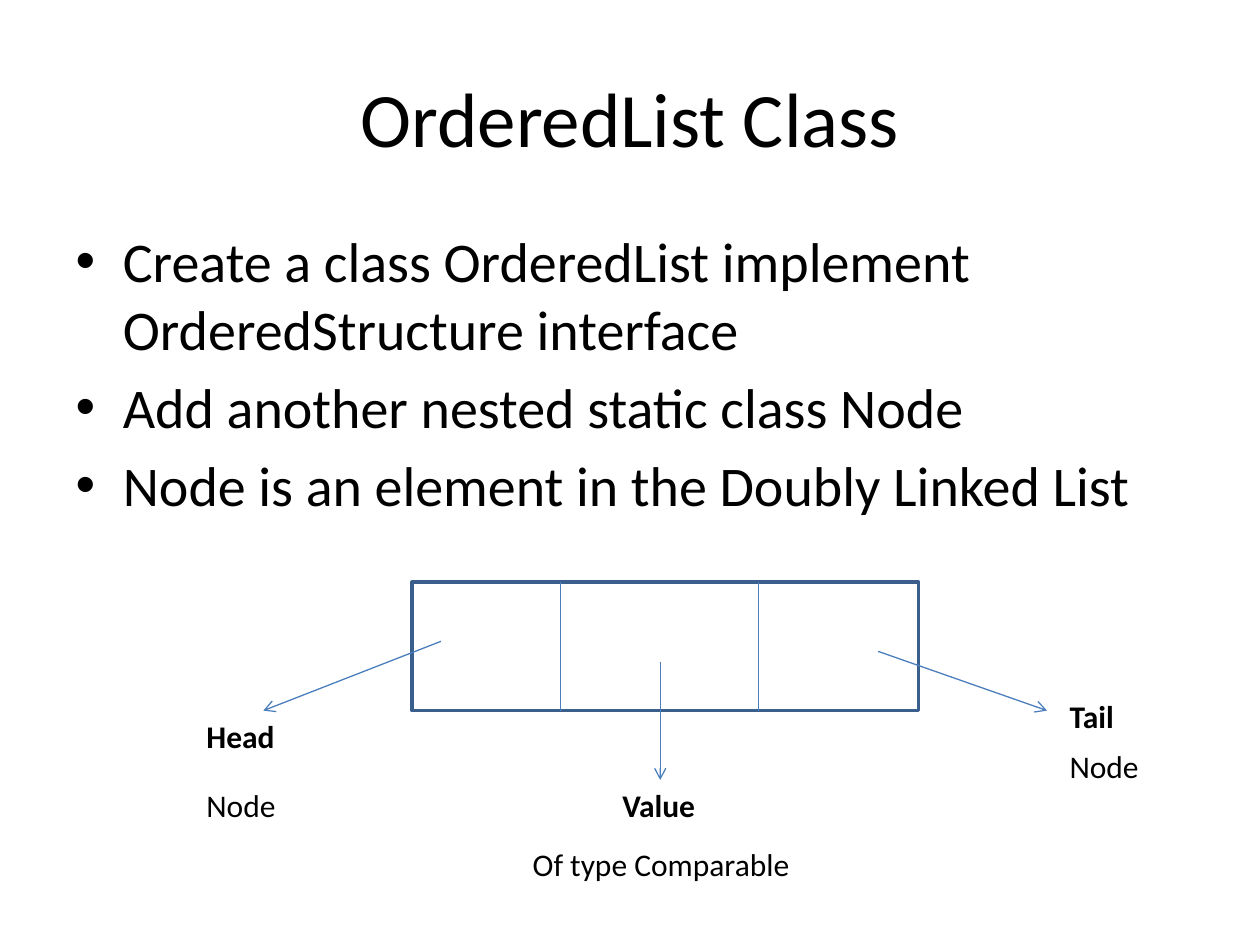
from dataclasses import dataclass

import pptx
import pptx.dml.color
import pptx.enum.shapes
import pptx.enum.text
import pptx.oxml.ns
import pptx.util
from lxml import etree
from pptx.util import Inches

COLORS = {"text": "000000", "outline": "3A5F8C", "line": "4B7EBC"}
FONT = "Calibri"
NODE_LEFT, NODE_TOP, NODE_WIDTH, NODE_HEIGHT = 3.27, 4.62, 4.02, 1.02
NODE_BOTTOM = NODE_TOP + NODE_HEIGHT
LABEL_HEIGHT = 0.4


@dataclass
class Line:
    start: tuple[float, float]
    end: tuple[float, float]
    arrow: bool = False


@dataclass
class Label:
    text: str
    left: float
    top: float
    width: float
    bold: bool = False


DIVIDERS = [Line((x, NODE_TOP), (x, NODE_BOTTOM)) for x in (4.45, 6.02)]
POINTERS = [
    Line((3.5, 5.09), (2.09, NODE_BOTTOM), arrow=True),
    Line((5.24, 5.25), (5.24, 6.19), arrow=True),
    Line((6.97, 5.17), (8.31, NODE_BOTTOM), arrow=True),
]
LABELS = [
    Label("Head", 1.54, 5.64, 0.74, bold=True),
    Label("Value", 4.84, 6.19, 0.78, bold=True),
    Label("Tail", 8.39, 5.48, 0.55, bold=True),
    Label("Of type Comparable", 4.13, 6.66, 2.26),
    Label("Node", 1.54, 6.19, 0.76),
    Label("Node", 8.39, 5.88, 0.76),
]
BULLETS = [
    "Create a class OrderedList implement OrderedStructure interface",
    "Add another nested static class Node",
    "Node is an element in the Doubly Linked List",
]


def color(name: str) -> pptx.dml.color.RGBColor:
    return pptx.dml.color.RGBColor.from_string(COLORS[name])


def write(frame, lines: list[str], size: int, **extra) -> None:
    """Fill a text frame with one formatted paragraph per line."""
    formats = {"name": FONT, "size": pptx.util.Pt(size), **extra}
    for number, line in enumerate(lines):
        para = frame.add_paragraph() if number else frame.paragraphs[0]
        span = para.add_run()
        span.text = line
        for name, value in formats.items():
            setattr(span.font, name, value)
        span.font.color.rgb = color("text")


def place(box, left: float, top: float, width: float, height: float) -> None:
    bounds = {"left": left, "top": top, "width": width, "height": height}
    for name, value in bounds.items():
        setattr(box, name, Inches(value))


def draw_node(page) -> None:
    box = page.shapes.add_shape(
        pptx.enum.shapes.MSO_SHAPE.RECTANGLE,
        Inches(NODE_LEFT), Inches(NODE_TOP),
        Inches(NODE_WIDTH), Inches(NODE_HEIGHT),
    )
    box.shadow.inherit = False
    box.fill.background()
    box.line.color.rgb = color("outline")
    box.line.width = pptx.util.Pt(2)


def draw_line(page, line: Line) -> None:
    connector = page.shapes.add_connector(
        pptx.enum.shapes.MSO_CONNECTOR.STRAIGHT,
        *(Inches(value) for value in line.start + line.end),
    )
    connector.line.color.rgb = color("line")
    connector.line.width = pptx.util.Pt(0.75)
    qn = pptx.oxml.ns.qn
    if line.arrow:
        outline = connector.line._get_or_add_ln()
        etree.SubElement(outline, qn("a:tailEnd"), type="arrow")
    etree.SubElement(connector._element.spPr, qn("a:effectLst"))


def draw_label(page, label: Label) -> None:
    box = page.shapes.add_textbox(
        Inches(label.left), Inches(label.top),
        Inches(label.width), Inches(LABEL_HEIGHT),
    )
    frame = box.text_frame
    frame.word_wrap = False
    frame.auto_size = pptx.enum.text.MSO_AUTO_SIZE.SHAPE_TO_FIT_TEXT
    write(frame, [label.text], 18, bold=label.bold)


def main() -> None:
    deck = pptx.Presentation()
    deck.slide_width, deck.slide_height = Inches(10), Inches(7.5)
    page = deck.slides.add_slide(deck.slide_layouts[1])

    title, body = page.placeholders
    place(title, 0.5, 0.3, 9, 1.25)
    write(title.text_frame, ["OrderedList Class"], 44)
    place(body, 0.5, 1.75, 9, 4.95)
    write(body.text_frame, BULLETS, 32)

    draw_node(page)
    for line in DIVIDERS + POINTERS:
        draw_line(page, line)
    for label in LABELS:
        draw_label(page, label)
    deck.save("out.pptx")


if __name__ == "__main__":
    main()
